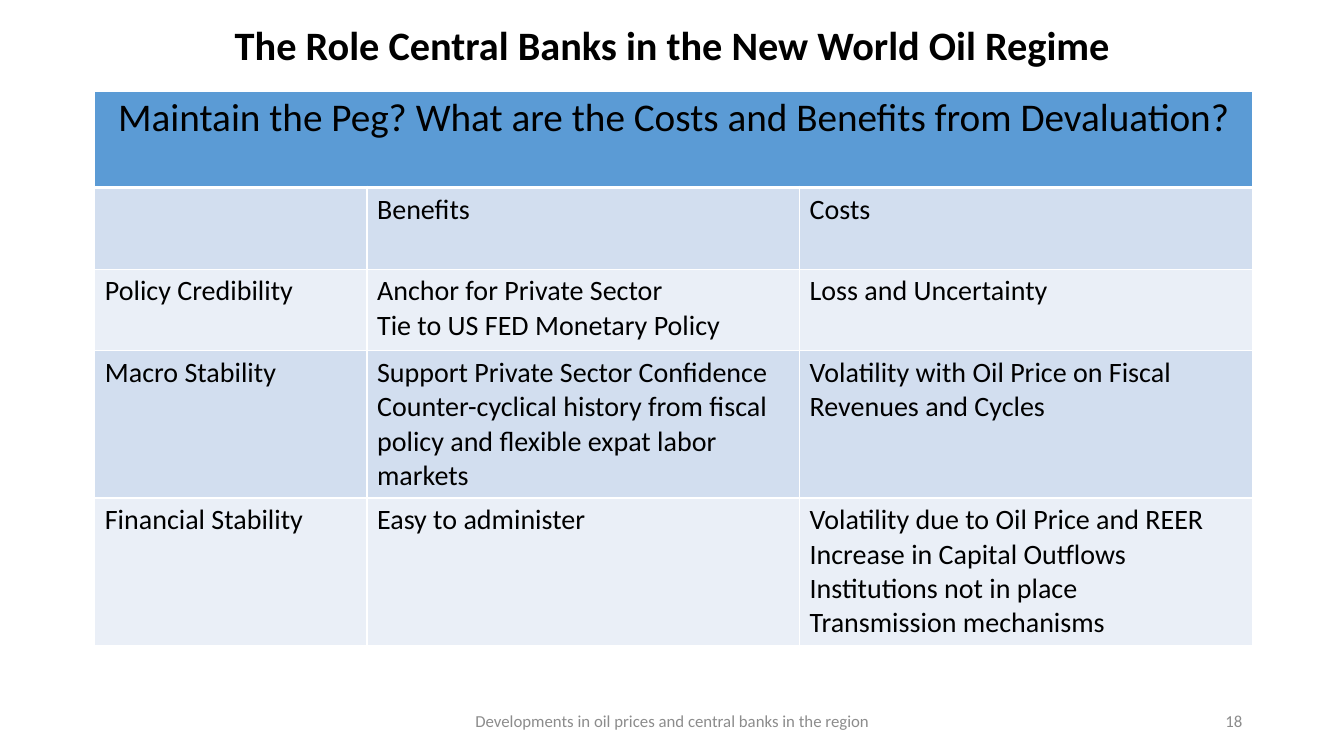
from dataclasses import dataclass

from lxml.etree import SubElement
from pptx import Presentation
from pptx.dml.color import RGBColor
from pptx.enum.text import MSO_ANCHOR, MSO_AUTO_SIZE, PP_ALIGN
from pptx.oxml.ns import qn
from pptx.util import Inches, Pt


@dataclass(frozen=True)
class Theme:
    face: str = "Calibri"
    ink: str = "000000"
    mute: str = "8C8C8C"
    head: str = "5B9BD5"
    bands: tuple = ("D2DEEF", "EAEFF7")
    rule: str = "FFFFFF"
    title: float = 28.8
    lead: float = 28
    body: float = 20
    foot: float = 12


THEME = Theme()
WIDE, HIGH = 13.33, 7.5
LEFT, SPAN = 0.92, 11.5

TITLE = "The Role Central Banks in the New World Oil Regime"
LEAD = "Maintain the Peg? What are the Costs and Benefits from Devaluation?"
COLS = (2.7, 4.29, 4.49)
ROWS = (0.95, 0.81, 0.81, 1.46, 1.46)
GRID = (
    ("", "Benefits", "Costs"),
    ("Policy Credibility",
     "Anchor for Private Sector\nTie to US FED Monetary Policy",
     "Loss and Uncertainty"),
    ("Macro Stability",
     "Support Private Sector Confidence\n"
     "Counter-cyclical history from fiscal policy and flexible expat labor markets",
     "Volatility with Oil Price on Fiscal Revenues and Cycles"),
    ("Financial Stability",
     "Easy to administer",
     "Volatility due to Oil Price and REER\nIncrease in Capital Outflows\n"
     "Institutions not in place\nTransmission mechanisms"),
)


def write(frame, text, size, color=THEME.ink, bold=False, **look):
    """Fill a text frame; look holds paragraph attributes."""
    frame.text = text
    for para in frame.paragraphs:
        font = para.font
        for key, val in {"name": THEME.face, "size": Pt(size), "bold": bold}.items():
            setattr(font, key, val)
        font.color.rgb = RGBColor.from_string(color)
        for key, val in look.items():
            setattr(para, key, val)


def settle(frame):
    """Wrap the text, centre it vertically and keep its size."""
    look = {"word_wrap": True, "auto_size": MSO_AUTO_SIZE.NONE,
            "vertical_anchor": MSO_ANCHOR.MIDDLE}
    for key, val in look.items():
        setattr(frame, key, val)


def add_title(slide, box):
    shape = slide.shapes.title
    for key, val in zip(("left", "top", "width", "height"), box):
        setattr(shape, key, Inches(val))
    settle(shape.text_frame)
    write(shape.text_frame, TITLE, THEME.title, bold=True,
          alignment=PP_ALIGN.CENTER, line_spacing=0.9)


def paint(cell, fill, base=1):
    """Rule all four sides in white, the lower one base points wide, and fill."""
    props = cell._tc.get_or_add_tcPr()
    for side, width in zip("LRTB", (1, 1, 1, base)):
        line = SubElement(props, qn(f"a:ln{side}"), w=str(Pt(width)))
        SubElement(SubElement(line, qn("a:solidFill")), qn("a:srgbClr"), val=THEME.rule)
    cell.fill.solid()
    cell.fill.fore_color.rgb = RGBColor.from_string(fill)


def add_grid(slide, left, top):
    box = map(Inches, (left, top, sum(COLS), sum(ROWS)))
    table = slide.shapes.add_table(len(ROWS), len(COLS), *box).table
    for col, width in zip(table.columns, COLS):
        col.width = Inches(width)
    for row, height in zip(table.rows, ROWS):
        row.height = Inches(height)

    for cell in table.rows[0].cells:
        paint(cell, THEME.head, base=3)
    head = table.cell(0, 0)
    head.merge(table.cell(0, len(COLS) - 1))
    write(head.text_frame, LEAD, THEME.lead,
          alignment=PP_ALIGN.CENTER, line_spacing=0.9)

    for r, texts in enumerate(GRID):
        for c, text in enumerate(texts):
            cell = table.cell(r + 1, c)
            paint(cell, THEME.bands[r % 2])
            write(cell.text_frame, text, THEME.body)


def add_foot(slide, left, top, width, height):
    mid, end = 4.5, 3
    parts = (
        (left + (width - mid) / 2, mid, PP_ALIGN.CENTER,
         "Developments in oil prices and central banks in the region"),
        (left + width - end, end, PP_ALIGN.RIGHT, "18"),
    )
    for x, wide, align, text in parts:
        box = map(Inches, (x, top, wide, height))
        frame = slide.shapes.add_textbox(*box).text_frame
        settle(frame)
        write(frame, text, THEME.foot, THEME.mute, alignment=align)


def main():
    deck = Presentation()
    deck.slide_width, deck.slide_height = Inches(WIDE), Inches(HIGH)
    slide = deck.slides.add_slide(deck.slide_layouts[5])
    add_title(slide, (LEFT, 0.17, SPAN, 0.6))
    add_grid(slide, LEFT + 0.02, 0.91)
    add_foot(slide, LEFT, 6.95, SPAN, 0.4)
    deck.save("out.pptx")


if __name__ == "__main__":
    main()
